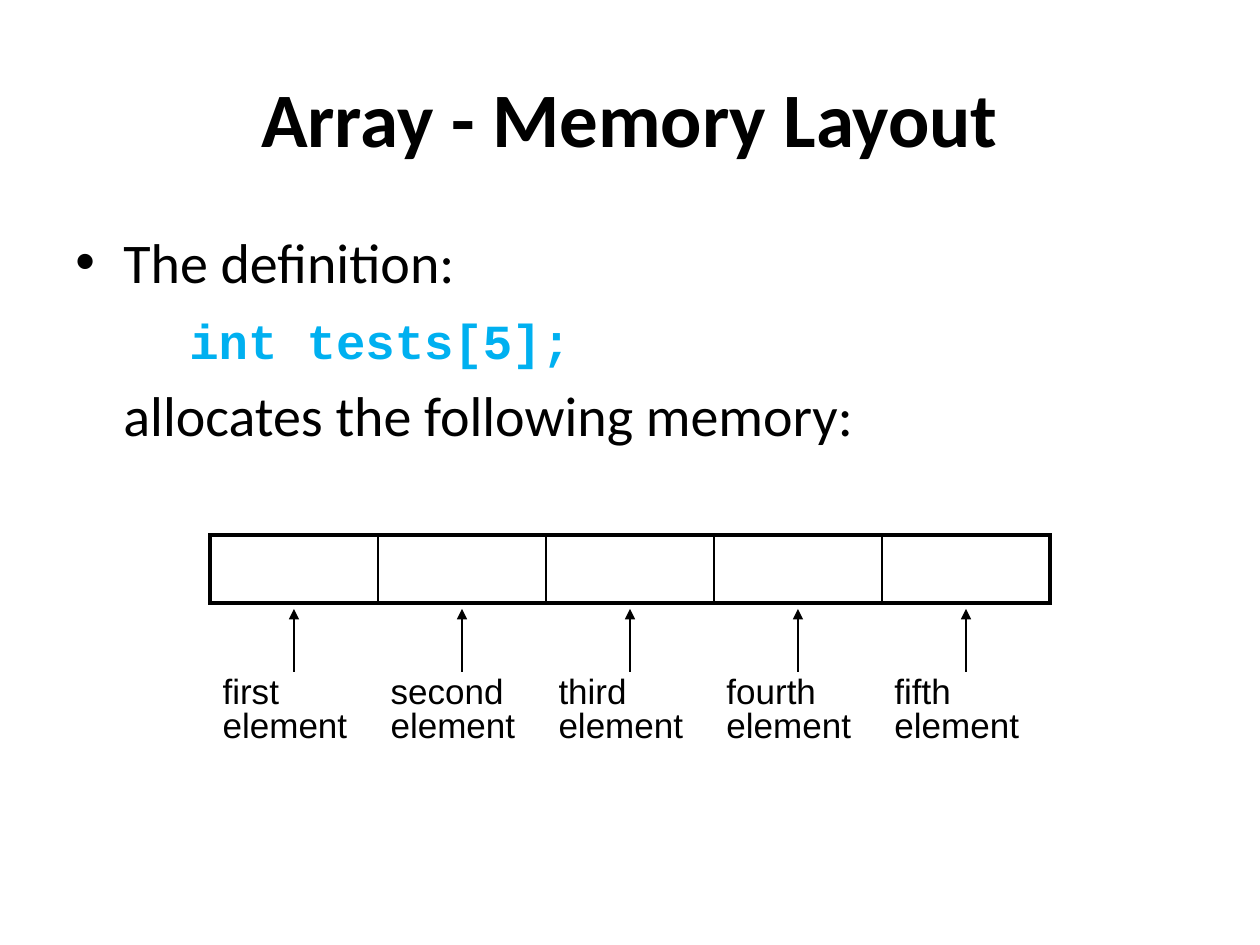
import dataclasses
import typing

import lxml.etree
import pptx
import pptx.dml.color
import pptx.enum.shapes
import pptx.enum.text
import pptx.oxml.ns
import pptx.util

EMU_PER_PX = 914400 / 126
COLORS = {"text": "000000", "code": "00B0F0", "line": "000000", "background": "FFFFFF"}
ORDINALS = ["first", "second", "third", "fourth", "fifth"]
CELL_WIDTH = 168
ARRAY_LEFT, ARRAY_TOP, ARRAY_HEIGHT = 210, 535, 68
LABEL_TOP, LABEL_HEIGHT = 672, 116
ARROW_TIP = 609
THICK, THIN = 2.25, 1


@dataclasses.dataclass
class TextLine:
    text: str
    size: int
    font: str = "Calibri"
    color: str = "text"
    bold: bool = False
    margin: int = 0
    bullet: str = ""
    format: dict[str, typing.Any] = dataclasses.field(default_factory=dict)


@dataclasses.dataclass
class TextBlock:
    left: int
    top: int
    width: int
    height: int
    anchor: pptx.enum.text.MSO_ANCHOR
    lines: list[TextLine]


@dataclasses.dataclass
class CellRow:
    left: int
    top: int
    height: int
    lines: list[TextLine]
    outline: float = 0
    divider: float = 0


def px(length: int) -> pptx.util.Emu:
    return pptx.util.Emu(round(length * EMU_PER_PX))


def rgb(name: str) -> pptx.dml.color.RGBColor:
    return pptx.dml.color.RGBColor.from_string(COLORS[name])


def add_element(parent, tag: str, **attributes: str):
    return lxml.etree.SubElement(parent, pptx.oxml.ns.qn(tag), attributes)


def set_all(target, values: dict[str, typing.Any]) -> None:
    for name, value in values.items():
        setattr(target, name, value)


def write_line(paragraph, line: TextLine) -> None:
    properties = paragraph._p.get_or_add_pPr()
    if line.margin:
        properties.set("marL", str(px(line.margin)))
        properties.set("indent", str(px(-line.margin if line.bullet else 0)))
    if line.bullet:
        add_element(properties, "a:buFont", typeface="Arial")
        add_element(properties, "a:buChar", char=line.bullet)
    set_all(paragraph, line.format)
    run = paragraph.add_run()
    run.text = line.text
    set_all(run.font, {"name": line.font, "size": pptx.util.Pt(line.size), "bold": line.bold})
    run.font.color.rgb = rgb(line.color)


def draw_text(slide, block: TextBlock) -> None:
    shape = slide.shapes.add_textbox(*map(px, (block.left, block.top, block.width, block.height)))
    frame = shape.text_frame
    set_all(frame, {"word_wrap": True, "vertical_anchor": block.anchor})
    for index, line in enumerate(block.lines):
        write_line(frame.add_paragraph() if index else frame.paragraphs[0], line)


def set_borders(cell, widths: dict[str, float]) -> None:
    """Set border widths in points, keyed by side in schema order; zero hides a side."""
    properties = cell._tc.get_or_add_tcPr()
    for index, (side, width) in enumerate(widths.items()):
        border = add_element(properties, f"a:ln{side}", w=str(pptx.util.Pt(width)))
        if width:
            fill = add_element(border, "a:solidFill")
            add_element(fill, "a:srgbClr", val=COLORS["line"])
        else:
            add_element(border, "a:noFill")
        properties.insert(index, border)


def draw_cells(slide, row: CellRow) -> None:
    count = len(ORDINALS)
    shape = slide.shapes.add_table(
        1, count, px(row.left), px(row.top), px(count * CELL_WIDTH), px(row.height)
    )
    table = shape.table
    set_all(table, {"first_row": False, "horz_banding": False})
    table.rows[0].height = px(row.height)
    for index, cell in enumerate(table.rows[0].cells):
        table.columns[index].width = px(CELL_WIDTH)
        cell.fill.background()
        set_borders(cell, {
            "L": row.divider if index else row.outline,
            "R": row.divider if index < count - 1 else row.outline,
            "T": row.outline,
            "B": row.outline,
        })
        if row.lines:
            write_line(cell.text_frame.paragraphs[0], row.lines[index])


def draw_arrow(slide, center: int, start: int, tip: int) -> None:
    connector = slide.shapes.add_connector(
        pptx.enum.shapes.MSO_CONNECTOR.STRAIGHT, px(center), px(start), px(center), px(tip)
    )
    connector.line.color.rgb = rgb("line")
    connector.line.width = pptx.util.Pt(0.75)
    properties = connector.element.spPr
    add_element(properties.find(pptx.oxml.ns.qn("a:ln")), "a:tailEnd", type="triangle")
    add_element(properties, "a:effectLst")


def main() -> None:
    presentation = pptx.Presentation()
    set_all(presentation, {"slide_width": px(1260), "slide_height": px(945)})
    slide = presentation.slides.add_slide(presentation.slide_layouts[6])
    slide.background.fill.solid()
    slide.background.fill.fore_color.rgb = rgb("background")

    centered = {"alignment": pptx.enum.text.PP_ALIGN.CENTER}
    title = TextLine("Array - Memory Layout", 44, bold=True, format=centered)
    body = [
        TextLine("The definition:", 32, margin=48, bullet="•"),
        TextLine("int tests[5];", 28, "Courier New", "code", True, 114,
                 format={"space_before": pptx.util.Pt(9)}),
        TextLine("allocates the following memory:", 32, margin=48,
                 format={"space_before": pptx.util.Pt(6.4)}),
    ]
    draw_text(slide, TextBlock(63, 38, 1134, 157, pptx.enum.text.MSO_ANCHOR.MIDDLE, [title]))
    draw_text(slide, TextBlock(63, 221, 1134, 624, pptx.enum.text.MSO_ANCHOR.TOP, body))

    labels = [
        TextLine(f"{ordinal} element", 20, "Arial", format={"line_spacing": 0.85})
        for ordinal in ORDINALS
    ]
    draw_cells(slide, CellRow(ARRAY_LEFT, ARRAY_TOP, ARRAY_HEIGHT, [], THICK, THIN))
    draw_cells(slide, CellRow(ARRAY_LEFT, LABEL_TOP, LABEL_HEIGHT, labels))
    for index in range(len(ORDINALS)):
        center = ARRAY_LEFT + index * CELL_WIDTH + CELL_WIDTH // 2
        draw_arrow(slide, center, LABEL_TOP, ARROW_TIP)

    presentation.save("out.pptx")


if __name__ == "__main__":
    main()
